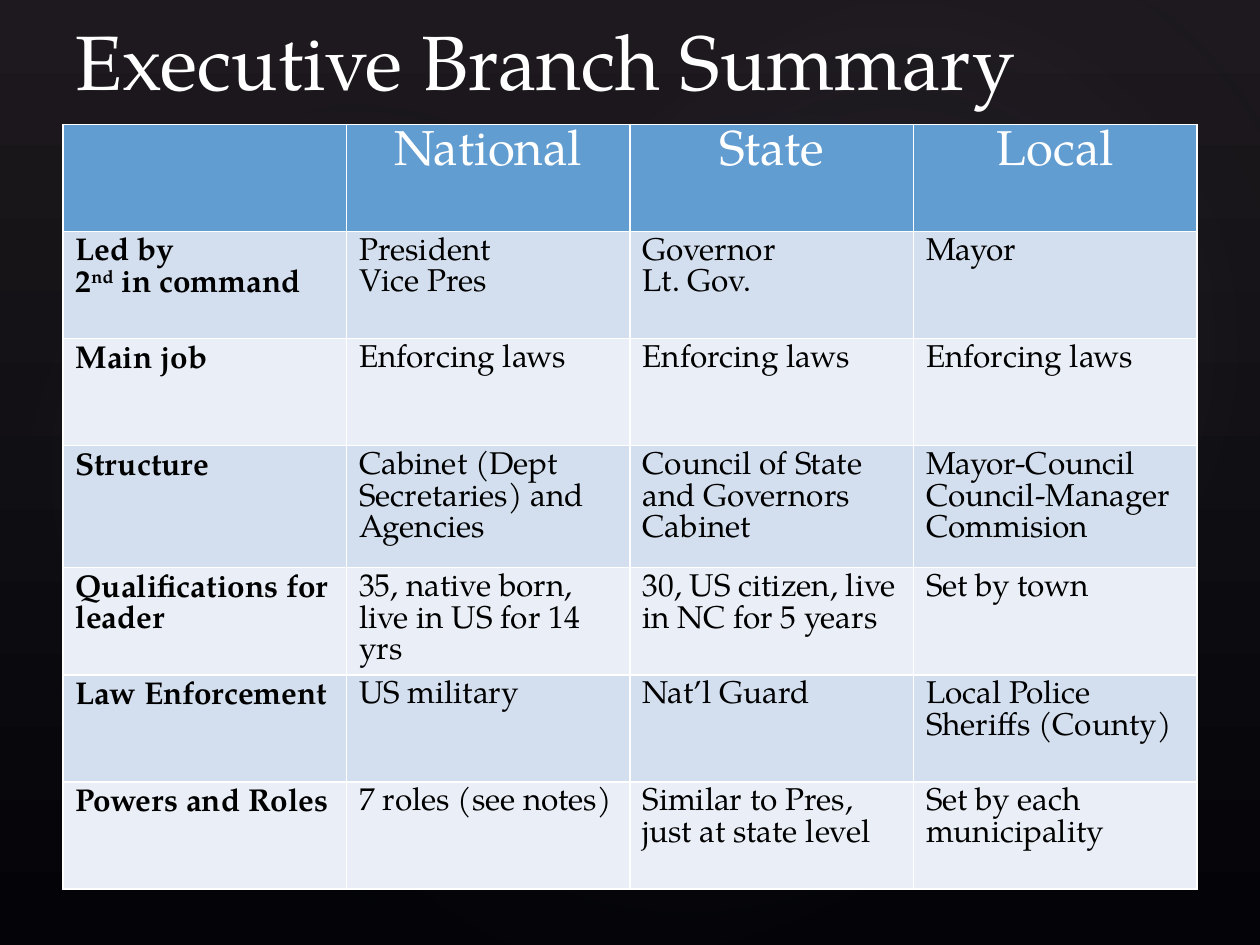
from dataclasses import dataclass

from lxml.etree import SubElement
from pptx import Presentation
from pptx.dml.color import RGBColor
from pptx.enum.shapes import MSO_SHAPE
from pptx.enum.text import MSO_ANCHOR, MSO_AUTO_SIZE, PP_ALIGN
from pptx.oxml import parse_xml
from pptx.oxml.ns import nsdecls, qn
from pptx.util import Pt


@dataclass(frozen=True)
class Theme:
    """Colours, font and type sizes of the slide."""

    font: str = "TeX Gyre Pagella"
    top: str = "1D191E"
    base: str = "040408"
    glow: str = "C4BCC6"
    fade: str = "242852"
    white: str = "FFFFFF"
    ink: str = "000000"
    head: str = "629DD1"
    bands: tuple = ("D3DFEE", "EAEFF7")
    title: int = 44
    label: int = 28
    body: int = 18


THEME = Theme()
GLOWS = [
    (108, 82, 570, 449, 328.7, 7),
    (-22, 92, 436, 353, 294.3, 8),
    (258, 9, 510, 374, 328.7, 8),
]
HEADS = ["", "National", "State", "Local"]
ROWS = [
    ["Led by\n2^nd^ in command", "President\nVice Pres", "Governor\nLt. Gov.", "Mayor"],
    ["Main job"] + ["Enforcing laws"] * 3,
    [
        "Structure",
        "Cabinet (Dept Secretaries) and Agencies",
        "Council of State and Governors Cabinet",
        "Mayor-Council\nCouncil-Manager\nCommision",
    ],
    [
        "Qualifications for leader",
        "35, native born, live in US for 14 yrs",
        "30, US citizen, live in NC for 5 years",
        "Set by town",
    ],
    ["Law Enforcement", "US military", "Nat’l Guard", "Local Police\nSheriffs (County)"],
    [
        "Powers and Roles",
        "7 roles (see notes)",
        "Similar to Pres, just at state level",
        "Set by each municipality",
    ],
]
HEIGHTS = [61.2, 61.2, 61.2, 69.8, 61.2, 61.2, 61.2]


def rgb(code):
    """Turn a hex code into a colour."""
    return RGBColor.from_string(code)


def style(para, size, color, bold=False, align=PP_ALIGN.LEFT):
    """Format one paragraph with set-solid lines."""
    para.alignment = align
    para.line_spacing = Pt(size)
    font = para.font
    font.name, font.size, font.bold = THEME.font, Pt(size), bold
    font.color.rgb = rgb(color)


def backdrop(slide):
    """Paint the dark gradient and its soft glows behind everything."""
    fill = slide.background.fill
    fill.gradient()
    fill.gradient_angle = 270
    for stop, code in zip(fill.gradient_stops, (THEME.top, THEME.base)):
        stop.color.rgb = rgb(code)
    for left, top, wide, high, turn, alpha in GLOWS:
        oval = slide.shapes.add_shape(
            MSO_SHAPE.OVAL, Pt(left), Pt(top), Pt(wide), Pt(high)
        )
        oval.rotation = turn
        oval.shadow.inherit = False
        oval.line.fill.background()
        shade = parse_xml(
            f'<a:gradFill {nsdecls("a")}><a:gsLst>'
            f'<a:gs pos="0"><a:srgbClr val="{THEME.glow}">'
            f'<a:alpha val="{alpha * 1000}"/></a:srgbClr></a:gs>'
            f'<a:gs pos="58000"><a:srgbClr val="{THEME.fade}">'
            '<a:alpha val="0"/></a:srgbClr></a:gs></a:gsLst>'
            '<a:path path="circle"><a:fillToRect l="50000" t="50000" '
            'r="50000" b="50000"/></a:path></a:gradFill>'
        )
        oval.element.spPr.find(qn("a:prstGeom")).addnext(shade)
        oval.element.getparent().insert(2, oval.element)


def heading(slide, left, top, wide, high):
    """Place the title in its box."""
    title = slide.shapes.title
    title.left, title.top = Pt(left), Pt(top)
    title.width, title.height = Pt(wide), Pt(high)
    frame = title.text_frame
    frame.auto_size = MSO_AUTO_SIZE.NONE
    frame.vertical_anchor = MSO_ANCHOR.BOTTOM
    frame.margin_bottom = 0
    frame.text = "Executive Branch Summary"
    style(frame.paragraphs[0], THEME.title, THEME.white)


def border(cell):
    """Rule all four sides of a cell."""
    props = cell._tc.get_or_add_tcPr()
    for side in ("lnL", "lnR", "lnT", "lnB"):
        line = SubElement(props, qn(f"a:{side}"), w=str(Pt(1)))
        fill = SubElement(line, qn("a:solidFill"))
        SubElement(fill, qn("a:srgbClr"), val=THEME.white)


def write(para, text):
    """Add text as runs, raising what stands between carets."""
    for spot, part in enumerate(text.split("^")):
        run = para.add_run()
        run.text = part
        if spot % 2:
            run._r.get_or_add_rPr().set("baseline", "30000")


def fill_cell(cell, text, fill, **look):
    """Set the fill, borders and paragraphs of a cell."""
    border(cell)
    cell.fill.solid()
    cell.fill.fore_color.rgb = rgb(fill)
    frame = cell.text_frame
    for spot, line in enumerate(text.split("\n")):
        para = frame.add_paragraph() if spot else frame.paragraphs[0]
        style(para, **look)
        if line:
            write(para, line)


def summary(slide, left, top, wide):
    """Build the table of branches by level."""
    table = slide.shapes.add_table(
        len(HEIGHTS), len(HEADS), Pt(left), Pt(top), Pt(wide), Pt(sum(HEIGHTS))
    ).table
    for col in table.columns:
        col.width = Pt(wide / len(HEADS))
    for row, high in zip(table.rows, HEIGHTS):
        row.height = Pt(high)
    for col, text in enumerate(HEADS):
        fill_cell(table.cell(0, col), text, THEME.head, size=THEME.label,
                  color=THEME.white, align=PP_ALIGN.CENTER)
    for row, texts in enumerate(ROWS):
        for col, text in enumerate(texts):
            fill_cell(table.cell(row + 1, col), text, THEME.bands[row % 2],
                      size=THEME.body, color=THEME.ink, bold=col == 0)


def main():
    """Build and save the slide."""
    deck = Presentation()
    deck.slide_width, deck.slide_height = Pt(720), Pt(540)
    slide = deck.slides.add_slide(deck.slide_layouts[5])
    backdrop(slide)
    heading(slide, 36, 0, 648, 60.5)
    summary(slide, 36, 71, 648)
    deck.save("out.pptx")


if __name__ == "__main__":
    main()
